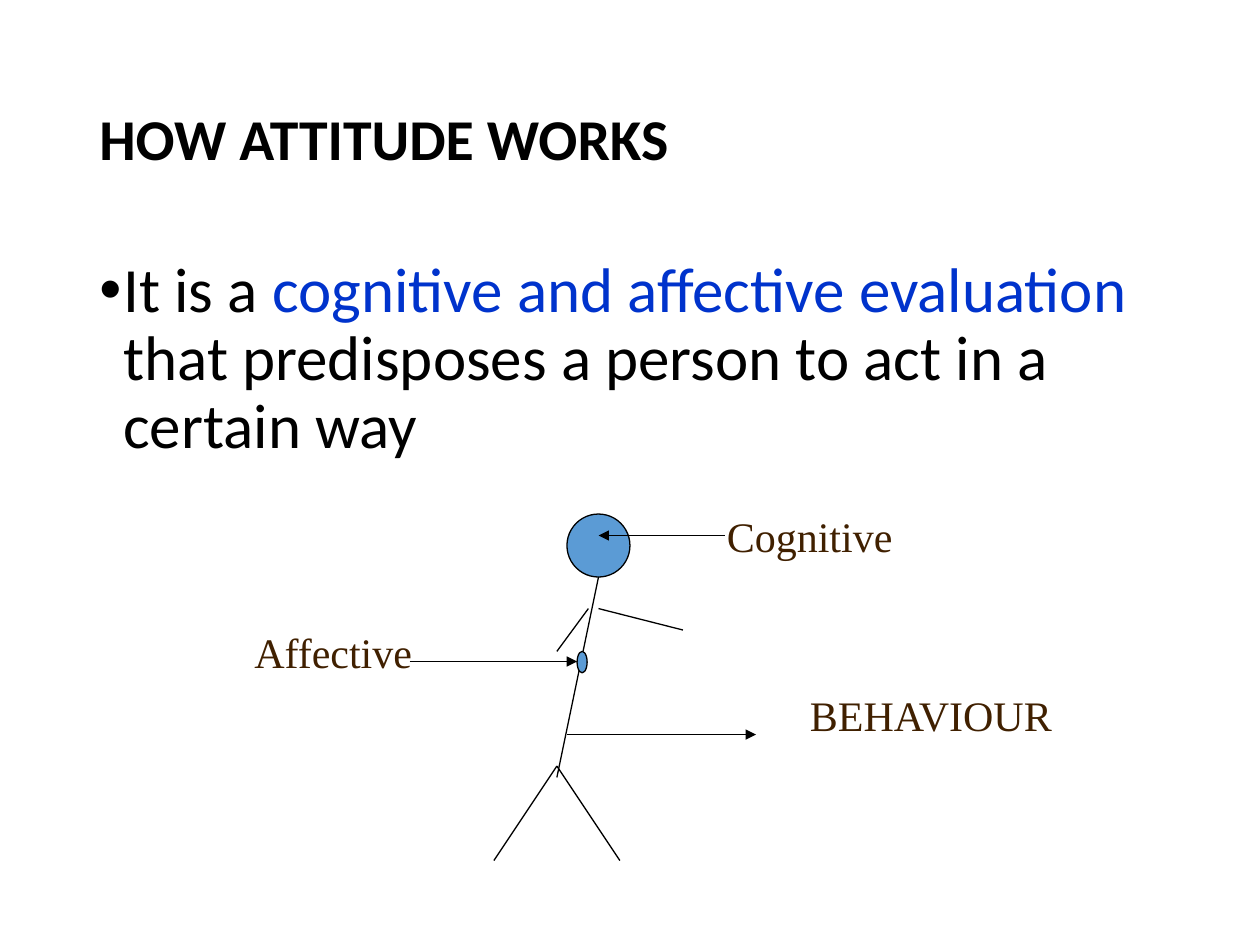
from dataclasses import dataclass

from lxml.etree import SubElement
from pptx import Presentation
from pptx.dml.color import RGBColor
from pptx.enum.shapes import MSO_CONNECTOR as CONN, MSO_SHAPE as SHAPE
from pptx.enum.text import MSO_ANCHOR as ANCHOR
from pptx.oxml.ns import qn
from pptx.util import Inches, Pt


@dataclass(frozen=True)
class Theme:
    ink: str = "000000"
    accent: str = "0033CC"
    label: str = "402000"
    figure: str = "5B9BD5"
    font: str = "Calibri"
    label_font: str = "Times New Roman"
    title_size: int = 33
    body_size: int = 36
    label_size: int = 24
    line_width: float = 0.75


T = Theme()

TITLE = "HOW ATTITUDE WORKS"
BODY = [
    ("It is a ", T.ink),
    ("cognitive and affective evaluation", T.accent),
    (" that predisposes a person to act in a certain way", T.ink),
]
TITLE_BOX = (0.69, 0.4, 8.62, 1.45)
BODY_BOX = (0.69, 2, 8.62, 4.76)
BODY_INDENT = 0.19

HEAD = (4.5, 4.08, 0.5, 0.5)
HEART = (4.58, 5.17, 0.08, 0.17)
NECK, HIP = (4.75, 4.58), (4.42, 6.08)
LIMBS = [
    (NECK, (4.42, 6.17)),
    (HIP, (4.92, 6.83)),
    (HIP, (3.92, 6.83)),
    ((4.67, 4.83), (4.42, 5.17)),
    ((4.75, 4.83), (5.42, 5)),
]
# text, label box, arrow start, arrow end
CALLOUTS = [
    ("Cognitive", (5.67, 4, 1.92, 0.5), (5.75, 4.25), (4.75, 4.25)),
    ("Affective", (1.92, 4.92, 1.67, 0.5), (3.25, 5.25), (4.58, 5.25)),
    ("BEHAVIOUR", (6.33, 5.42, 2.42, 0.5), (4.5, 5.83), (6, 5.83)),
]


def inches(values):
    return [Inches(v) for v in values]


def rgb(color):
    return RGBColor.from_string(color)


def add_text(s, box, runs, size, font=T.font, bold=False, anchor=ANCHOR.TOP):
    """Add a one-paragraph text box from (text, color) runs; return the paragraph."""
    tf = s.shapes.add_textbox(*inches(box)).text_frame
    tf.word_wrap = True
    tf.vertical_anchor = anchor
    p = tf.paragraphs[0]
    for text, color in runs:
        r = p.add_run()
        r.text = text
        r.font.name, r.font.size, r.font.bold = font, Pt(size), bold
        r.font.color.rgb = rgb(color)
    return p


def add_bullet(p, indent):
    pPr = p._p.get_or_add_pPr()
    pPr.set("marL", str(Inches(indent)))
    pPr.set("indent", str(-Inches(indent)))
    SubElement(pPr, qn("a:buFont"), typeface="Arial")
    SubElement(pPr, qn("a:buChar"), char="•")


def add_ellipse(s, box):
    sp = s.shapes.add_shape(SHAPE.OVAL, *inches(box))
    sp.shadow.inherit = False
    sp.fill.solid()
    sp.fill.fore_color.rgb = rgb(T.figure)
    sp.line.color.rgb = rgb(T.ink)
    sp.line.width = Pt(T.line_width)


def add_line(s, start, end, arrow=False):
    line = s.shapes.add_connector(CONN.STRAIGHT, *inches(start + end))
    line.line.color.rgb = rgb(T.ink)
    line.line.width = Pt(T.line_width)
    if arrow:
        SubElement(line.line._get_or_add_ln(), qn("a:tailEnd"), type="triangle")
    SubElement(line._element.spPr, qn("a:effectLst"))


def main():
    prs = Presentation()
    prs.slide_width, prs.slide_height = Inches(10), Inches(7.5)
    s = prs.slides.add_slide(prs.slide_layouts[6])

    p = add_text(s, TITLE_BOX, [(TITLE, T.ink)], T.title_size,
                 bold=True, anchor=ANCHOR.MIDDLE)
    p.line_spacing = 0.9
    p = add_text(s, BODY_BOX, BODY, T.body_size)
    p.line_spacing, p.space_before = 0.9, Pt(7.5)
    add_bullet(p, BODY_INDENT)

    add_ellipse(s, HEAD)
    for start, end in LIMBS:
        add_line(s, start, end)
    for text, box, start, end in CALLOUTS:
        add_text(s, box, [(text, T.label)], T.label_size, T.label_font)
        add_line(s, start, end, arrow=True)
    add_ellipse(s, HEART)

    prs.save("out.pptx")


if __name__ == "__main__":
    main()
